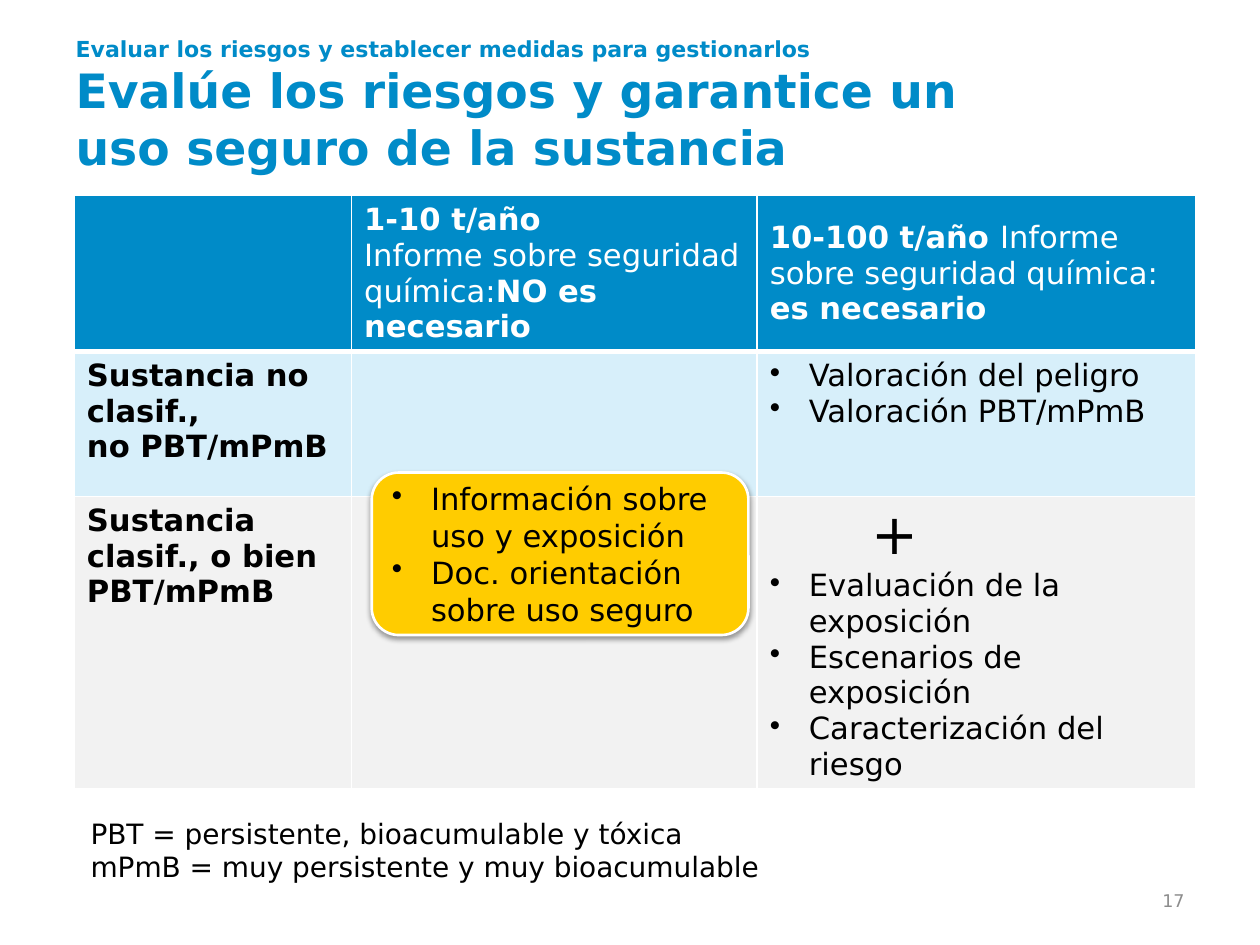
from lxml import etree
from pptx import Presentation
from pptx import util as u
from pptx.dml.color import RGBColor
from pptx.enum import shapes, text
from pptx.oxml.ns import qn

COLORS = {"blue": "008BC8", "sky": "D7EFFA", "pale": "F2F2F2", "yellow": "FFCC00",
          "white": "FFFFFF", "black": "000000", "grey": "8C8C8C"}
FONT = "DejaVu Sans"
BODY = 17.5
PLUS_INDENT = 0.81

KICKER = "Evaluar los riesgos y establecer medidas para gestionarlos"
TITLE = ["Evalúe los riesgos y garantice un", "uso seguro de la sustancia"]

# A paragraph is a list of (text, bold) runs; a plain string is a bulleted line.
HEADER = [
    [],
    [[("1-10 t/año", True)],
     [("Informe sobre seguridad química:", False), ("NO es necesario", True)]],
    [[("10-100 t/año ", True), ("Informe sobre seguridad química: ", False),
      ("es necesario", True)]],
]
ROWS = [
    HEADER,
    [[[("Sustancia no clasif.,", True)], [("no PBT/mPmB", True)]],
     [],
     ["Valoración del peligro", "Valoración PBT/mPmB"]],
    [[[("Sustancia clasif., o bien", True)], [("PBT/mPmB", True)]],
     [],
     [[("+", False)], "Evaluación de la exposición", "Escenarios de exposición",
      "Caracterización del riesgo"]],
]
ROW_FILLS = ["blue", "sky", "pale"]
ROW_HEIGHTS = [1.24, 1.15, 2.31]
COL_WIDTHS = [2.2, 3.22, 3.48]
CALLOUT = ["Información sobre uso y exposición", "Doc. orientación sobre uso seguro"]
NOTES = [[("PBT = persistente, bioacumulable y tóxica", False)],
         [("mPmB = muy persistente y muy bioacumulable", False)]]
PAGE = [[("17", False)]]


def rgb(name):
    return RGBColor.from_string(COLORS[name])


def box(*lengths):
    return [u.Inches(n) for n in lengths]


def style(r, size, color, bold):
    for key, value in {"name": FONT, "size": u.Pt(size), "bold": bold}.items():
        setattr(r.font, key, value)
    r.font.color.rgb = rgb(color)


def indent(p, left, hanging=0):
    pPr = p._p.get_or_add_pPr()
    pPr.set("marL", str(u.Inches(left)))
    pPr.set("indent", str(-u.Inches(hanging)))
    return pPr


def write(tf, paragraphs, size=BODY, color="black"):
    for i, runs in enumerate(paragraphs):
        p = tf.paragraphs[0] if i == 0 else tf.add_paragraph()
        p.alignment = text.PP_ALIGN.LEFT
        if isinstance(runs, str):
            pPr = indent(p, 0.31, 0.31)
            etree.SubElement(pPr, qn("a:buChar"), char="•")
            runs = [(runs, False)]
        for words, bold in runs:
            r = p.add_run()
            r.text = words
            style(r, size, color, bold)


def add_border(cell, side, width):
    ln = etree.SubElement(cell._tc.get_or_add_tcPr(), qn("a:ln" + side), w=str(u.Pt(width)))
    fill = etree.SubElement(ln, qn("a:solidFill"))
    etree.SubElement(fill, qn("a:srgbClr"), val=COLORS["white"])


def add_title(s):
    sp = s.shapes.title
    sp.left, sp.top, sp.width, sp.height = box(0.5, 0.21, 9, 1.25)
    tf = sp.text_frame
    tf.auto_size = text.MSO_AUTO_SIZE.NONE
    tf.vertical_anchor = text.MSO_ANCHOR.MIDDLE
    p = tf.paragraphs[0]
    p.alignment = text.PP_ALIGN.LEFT
    for i, (line, size) in enumerate([(KICKER, 12.6)] + [(t, 27) for t in TITLE]):
        if i:
            p.add_line_break()
        r = p.add_run()
        r.text = line
        style(r, size, "blue", True)


def add_risk_table(s):
    frame = s.shapes.add_table(len(ROWS), len(COL_WIDTHS),
                               *box(0.59, 1.55, sum(COL_WIDTHS), sum(ROW_HEIGHTS)))
    table = frame.table
    for col, width in zip(table.columns, COL_WIDTHS):
        col.width = u.Inches(width)
    for i, (row, height) in enumerate(zip(table.rows, ROW_HEIGHTS)):
        row.height = u.Inches(height)
        for cell, content in zip(row.cells, ROWS[i]):
            for side in "LRTB":
                heavy = (i, side) in [(0, "B"), (1, "T")]
                add_border(cell, side, 3 if heavy else 1)
            cell.fill.solid()
            cell.fill.fore_color.rgb = rgb(ROW_FILLS[i])
            cell.vertical_anchor = text.MSO_ANCHOR.TOP if i else text.MSO_ANCHOR.MIDDLE
            write(cell.text_frame, content, color="black" if i else "white")
    plus = table.cell(2, 2).text_frame.paragraphs[0]
    indent(plus, PLUS_INDENT)
    plus.runs[0].font.size = u.Pt(32)


def add_text(s, place, paragraphs, size, color="black"):
    tf = s.shapes.add_textbox(*box(*place)).text_frame
    tf.word_wrap = True
    write(tf, paragraphs, size, color)
    return tf


def add_callout(s):
    sp = s.shapes.add_shape(shapes.MSO_SHAPE.ROUNDED_RECTANGLE, *box(2.95, 3.75, 2.99, 1.29))
    sp.fill.solid()
    sp.fill.fore_color.rgb = rgb("yellow")
    sp.line.color.rgb = rgb("white")
    sp.line.width = u.Pt(1.5)
    sp.shadow.inherit = False
    effects = sp._element.spPr.find(qn("a:effectLst"))
    shadow = etree.SubElement(effects, qn("a:outerShdw"), blurRad=str(u.Pt(3.1)),
                              dist=str(u.Pt(1.6)), dir="5400000", rotWithShape="0")
    color = etree.SubElement(shadow, qn("a:srgbClr"), val=COLORS["black"])
    etree.SubElement(color, qn("a:alpha"), val="38000")
    sp.text_frame.vertical_anchor = text.MSO_ANCHOR.MIDDLE
    write(sp.text_frame, CALLOUT)


def main():
    prs = Presentation()
    prs.slide_width, prs.slide_height = box(10, 7.5)
    s = prs.slides.add_slide(prs.slide_layouts[5])
    add_title(s)
    add_risk_table(s)
    add_text(s, (0.62, 6.43, 7.38, 0.64), NOTES, 16)
    page = add_text(s, (7.17, 6.95, 2.33, 0.4), PAGE, 10, "grey")
    page.vertical_anchor = text.MSO_ANCHOR.MIDDLE
    page.paragraphs[0].alignment = text.PP_ALIGN.RIGHT
    add_callout(s)
    prs.save("out.pptx")


if __name__ == "__main__":
    main()
